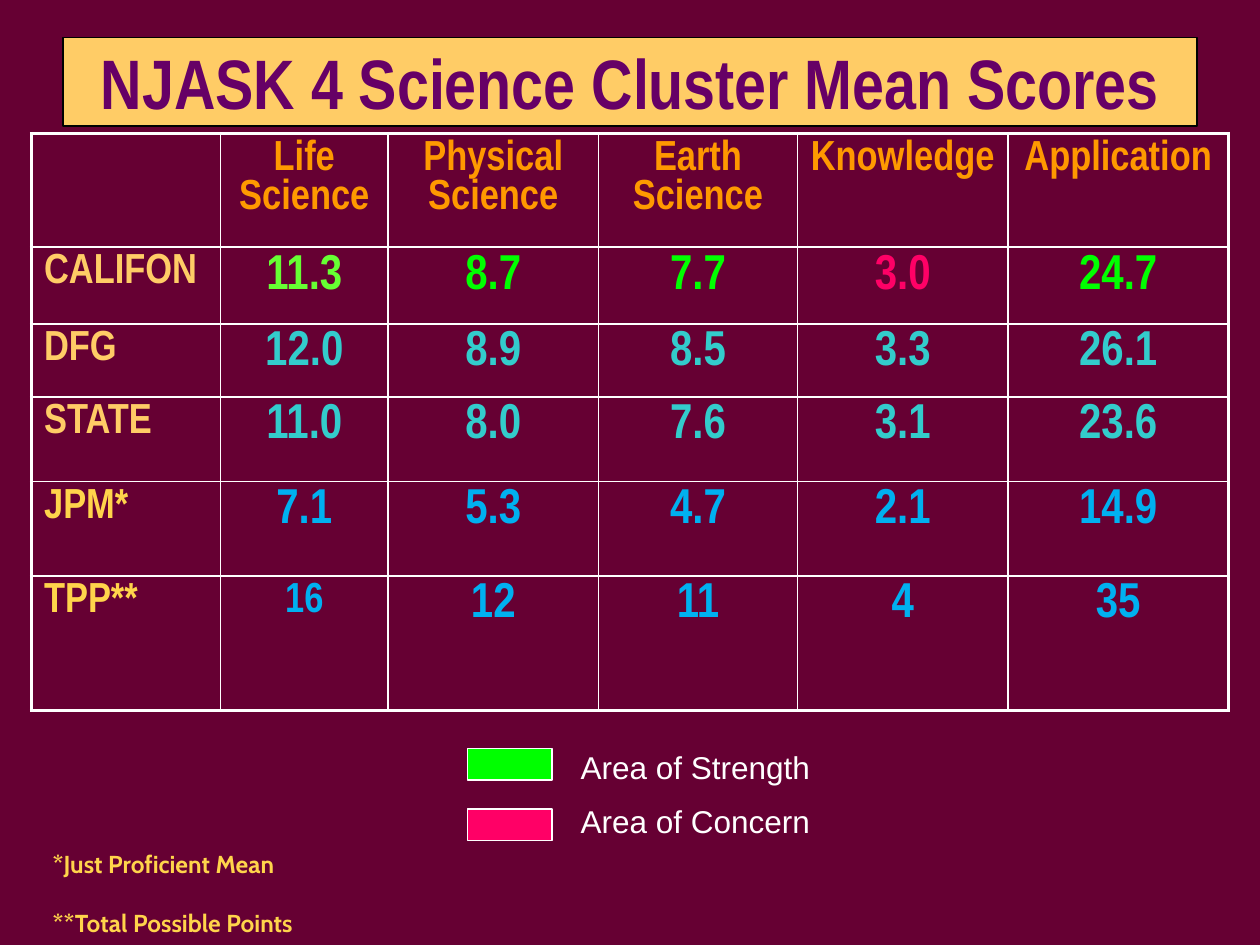
from lxml import etree
from pptx import Presentation
from pptx.dml.color import RGBColor
from pptx.enum import shapes, text
from pptx.oxml import ns
from pptx.util import Inches, Pt

HUES = {
    "wine": "660033", "sand": "FFCC66", "plum": "660066", "black": "000000",
    "white": "FFFFFF", "orange": "FF9900", "lime": "66FF33", "green": "00FF00",
    "pink": "FF0066", "teal": "33CCCC", "gold": "FFD44B", "blue": "00B0F0",
}
TITLE = "NJASK 4 Science Cluster Mean Scores"
HEADS = ["", "Life Science", "Physical Science", "Earth Science", "Knowledge", "Application"]
ROWS = [
    ("CALIFON", "sand", "green", ["11.3", "8.7", "7.7", "3.0", "24.7"]),
    ("DFG", "sand", "teal", ["12.0", "8.9", "8.5", "3.3", "26.1"]),
    ("STATE", "sand", "teal", ["11.0", "8.0", "7.6", "3.1", "23.6"]),
    ("JPM*", "gold", "blue", ["7.1", "5.3", "4.7", "2.1", "14.9"]),
    ("TPP**", "gold", "blue", ["16", "12", "11", "4", "35"]),
]
ODD = {"11.3": (28, "lime"), "3.0": (28, "pink"), "16": (24, "blue")}
WIDTHS = [1.5, 1.33, 1.67, 1.58, 1.67, 1.75]
HEIGHTS = [0.89, 0.61, 0.58, 0.67, 0.75, 1.07]
KEYS = [("Area of Strength", "green"), ("Area of Concern", "pink")]
NOTES = ["*Just Proficient Mean", "**Total Possible Points"]


def hue(name):
    return RGBColor.from_string(HUES[name])


def write(para, words, size, face, tint, bold=True):
    run = para.add_run()
    run.text = words
    font = run.font
    font.size, font.name, font.bold = Pt(size), face, bold
    font.color.rgb = hue(tint)


def paint(shape, fill, line, width):
    shape.fill.solid()
    shape.fill.fore_color.rgb = hue(fill)
    shape.line.color.rgb = hue(line)
    shape.line.width = Pt(width)


def edge(cell, side, width):
    props = cell._tc.get_or_add_tcPr()
    line = etree.SubElement(props, ns.qn("a:ln" + side), w=str(Pt(width)))
    fill = etree.SubElement(line, ns.qn("a:solidFill"))
    etree.SubElement(fill, ns.qn("a:srgbClr"), val=HUES["white"])


def add_lines(slide, box, lines, size, face, tint, bold, gap):
    frame = slide.shapes.add_textbox(*map(Inches, box)).text_frame
    frame.word_wrap = True
    for i, words in enumerate(lines):
        para = frame.add_paragraph() if i else frame.paragraphs[0]
        if i:
            para.space_before = Pt(gap)
        write(para, words, size, face, tint, bold)


def add_title(slide):
    title = slide.shapes.title
    title.left, title.top, title.width, title.height = map(Inches, (0.5, 0.3, 9, 0.7))
    paint(title, "sand", "black", 0.75)
    frame = title.text_frame
    frame.auto_size = text.MSO_AUTO_SIZE.NONE
    frame.vertical_anchor = text.MSO_ANCHOR.MIDDLE
    para = frame.paragraphs[0]
    para.alignment = text.PP_ALIGN.CENTER
    write(para, TITLE, 40, "Arial Narrow", "plum")


def add_scores(slide):
    grid = [[(words, 24, "orange") for words in HEADS]]
    for label, tint, shade, scores in ROWS:
        grid.append([(label, 24, tint)] + [(s, *ODD.get(s, (28, shade))) for s in scores])
    deep, wide = len(grid), len(HEADS)
    box = map(Inches, (0.25, 1.06, sum(WIDTHS), sum(HEIGHTS)))
    table = slide.shapes.add_table(deep, wide, *box).table
    table.first_row = table.horz_banding = False
    for col, size in zip(table.columns, WIDTHS):
        col.width = Inches(size)
    for row, size in zip(table.rows, HEIGHTS):
        row.height = Inches(size)
    for r, line in enumerate(grid):
        for c, (words, size, tint) in enumerate(line):
            cell = table.cell(r, c)
            outer = {"L": c == 0, "R": c == wide - 1, "T": r == 0, "B": r == deep - 1}
            for side, thick in outer.items():
                edge(cell, side, 2.25 if thick else 1)
            cell.fill.background()
            para = cell.text_frame.paragraphs[0]
            para.alignment = text.PP_ALIGN.CENTER if c else text.PP_ALIGN.LEFT
            if words:
                write(para, words, size, "Arial Narrow", tint)


def add_legend(slide):
    for i, (_, tint) in enumerate(KEYS):
        box = map(Inches, (3.71, 5.94 + 0.48 * i, 0.67, 0.25))
        patch = slide.shapes.add_shape(shapes.MSO_SHAPE.RECTANGLE, *box)
        patch.shadow.inherit = False
        paint(patch, tint, "white", 1)
    names = [name for name, _ in KEYS]
    add_lines(slide, (4.51, 5.89, 2.17, 0.84), names, 18, "Arial", "white", False, 9.2)


def main():
    deck = Presentation()
    deck.slide_width, deck.slide_height = Inches(10), Inches(7.5)
    slide = deck.slides.add_slide(deck.slide_layouts[5])
    back = slide.background.fill
    back.solid()
    back.fore_color.rgb = hue("wine")
    add_title(slide)
    add_legend(slide)
    add_scores(slide)
    add_lines(slide, (0.32, 6.69, 2.9, 0.81), NOTES, 14, "Cabin", "gold", True, 17)
    deck.save("out.pptx")


if __name__ == "__main__":
    main()
